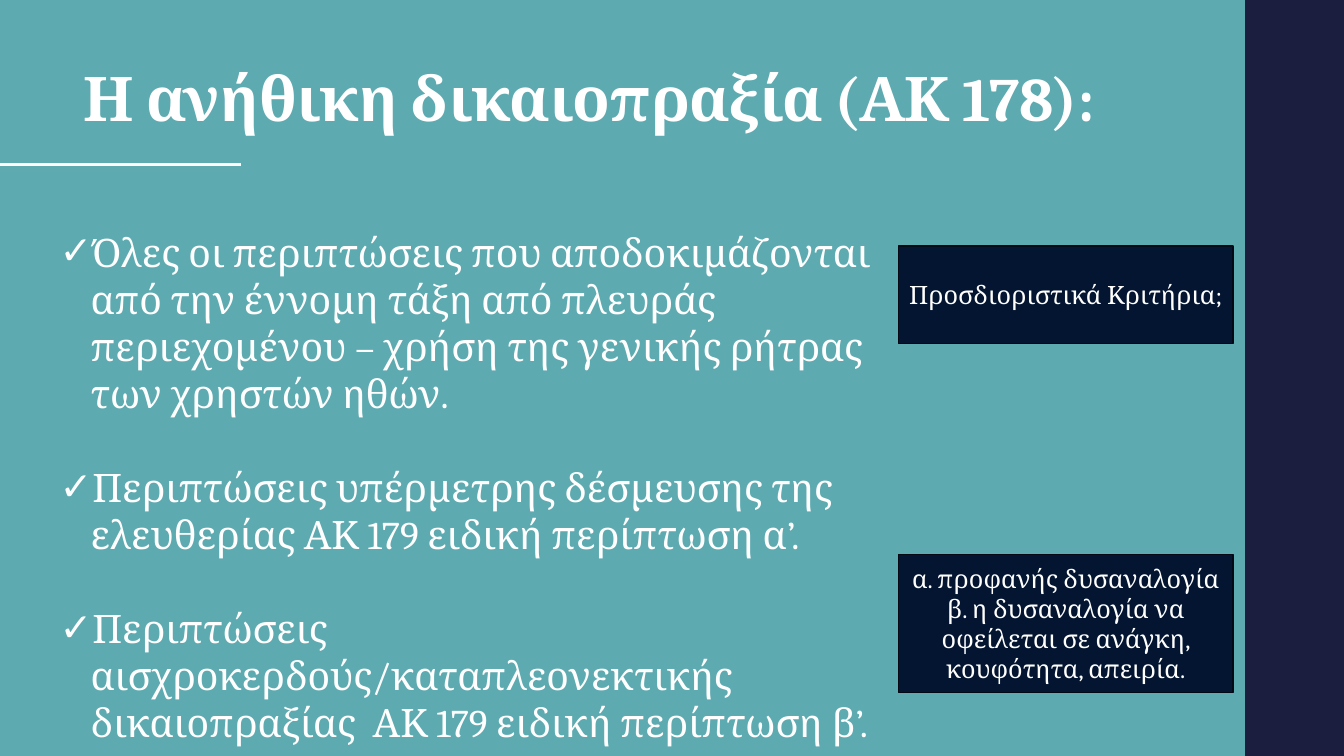
"""Builds the slide on immoral legal acts (ΑΚ 178)."""
from lxml import etree
from pptx import Presentation
from pptx.dml.color import RGBColor
from pptx.enum import shapes, text
from pptx.oxml import ns
from pptx.util import Inches, Pt

TEAL = RGBColor(0x5D, 0xAA, 0xB0)
INDIGO = RGBColor(0x1B, 0x1E, 0x3E)
NAVY = RGBColor(0x03, 0x15, 0x31)
NAVY_EDGE = RGBColor(0x01, 0x09, 0x15)
WHITE = RGBColor(0xFF, 0xFF, 0xFF)


def place(box, left, top, width, height):
    box.left, box.top = Inches(left), Inches(top)
    box.width, box.height = Inches(width), Inches(height)


def style(frame, size, align, bold=False):
    frame.word_wrap = True
    frame.auto_size = text.MSO_AUTO_SIZE.NONE
    for para in frame.paragraphs:
        para.alignment = align
        for span in para.runs:
            span.font.name = "Cambria"
            span.font.size = Pt(size)
            span.font.bold = bold
            span.font.color.rgb = WHITE


deck = Presentation()
deck.slide_width, deck.slide_height = Inches(13.33), Inches(7.5)
page = deck.slides.add_slide(deck.slide_layouts[1])
page.background.fill.solid()
page.background.fill.fore_color.rgb = TEAL

side_band = page.shapes.add_shape(
    shapes.MSO_SHAPE.RECTANGLE, Inches(12.35), 0, Inches(0.98), Inches(7.5))
side_band.shadow.inherit = False
side_band.fill.solid()
side_band.fill.fore_color.rgb = INDIGO
side_band.line.fill.background()

title_rule = page.shapes.add_connector(
    shapes.MSO_CONNECTOR.STRAIGHT, Inches(2.39), Inches(1.63), 0, Inches(1.63))
title_rule.line.color.rgb = WHITE
title_rule.line.width = Pt(2)
etree.SubElement(title_rule._element.spPr, ns.qn("a:effectLst"))

title = page.shapes.title
place(title, 0.73, 0.63, 11.08, 0.53)
title.text_frame.text = "Η ανήθικη δικαιοπραξία (ΑΚ 178):"
title.text_frame.vertical_anchor = text.MSO_ANCHOR.TOP
style(title.text_frame, 44, text.PP_ALIGN.LEFT, bold=True)
heading = title.text_frame.paragraphs[0]
heading.line_spacing = 0.9
heading.runs[0].font._element.set("spc", "-50")

cases = page.placeholders[1]
place(cases, 0.49, 2.21, 8.42, 5.28)
cases.text_frame.text = "\n".join([
    "Όλες οι περιπτώσεις που αποδοκιμάζονται από την έννομη τάξη από πλευράς "
    "περιεχομένου – χρήση της γενικής ρήτρας των χρηστών ηθών.",
    "Περιπτώσεις υπέρμετρης δέσμευσης της ελευθερίας ΑΚ 179 ειδική περίπτωση α’.",
    "Περιπτώσεις αισχροκερδούς/καταπλεονεκτικής δικαιοπραξίας  ΑΚ 179 ειδική περίπτωση β’.",
])
for index, para in enumerate(cases.text_frame.paragraphs):
    properties = para._p.get_or_add_pPr()
    properties.set("marL", str(Inches(0.31)))
    properties.set("indent", str(-Inches(0.31)))
    etree.SubElement(properties, ns.qn("a:buChar"), char="✓")
    para.space_before = Pt(33.6 if index else 0)
style(cases.text_frame, 28, text.PP_ALIGN.LEFT)

criteria = [
    (2.44, 0.97, "Προσδιοριστικά Κριτήρια;"),
    (5.5, 1.37, "α. προφανής δυσαναλογία\n"
                "β. η δυσαναλογία να οφείλεται σε ανάγκη, κουφότητα, απειρία."),
]
for top, height, wording in criteria:
    box = page.shapes.add_shape(
        shapes.MSO_SHAPE.RECTANGLE, Inches(8.91), Inches(top), Inches(3.32), Inches(height))
    box.shadow.inherit = False
    box.fill.solid()
    box.fill.fore_color.rgb = NAVY
    box.line.color.rgb = NAVY_EDGE
    box.line.width = Pt(1.1)
    box.text_frame.text = wording
    box.text_frame.vertical_anchor = text.MSO_ANCHOR.MIDDLE
    style(box.text_frame, 18, text.PP_ALIGN.CENTER)

deck.save("out.pptx")
